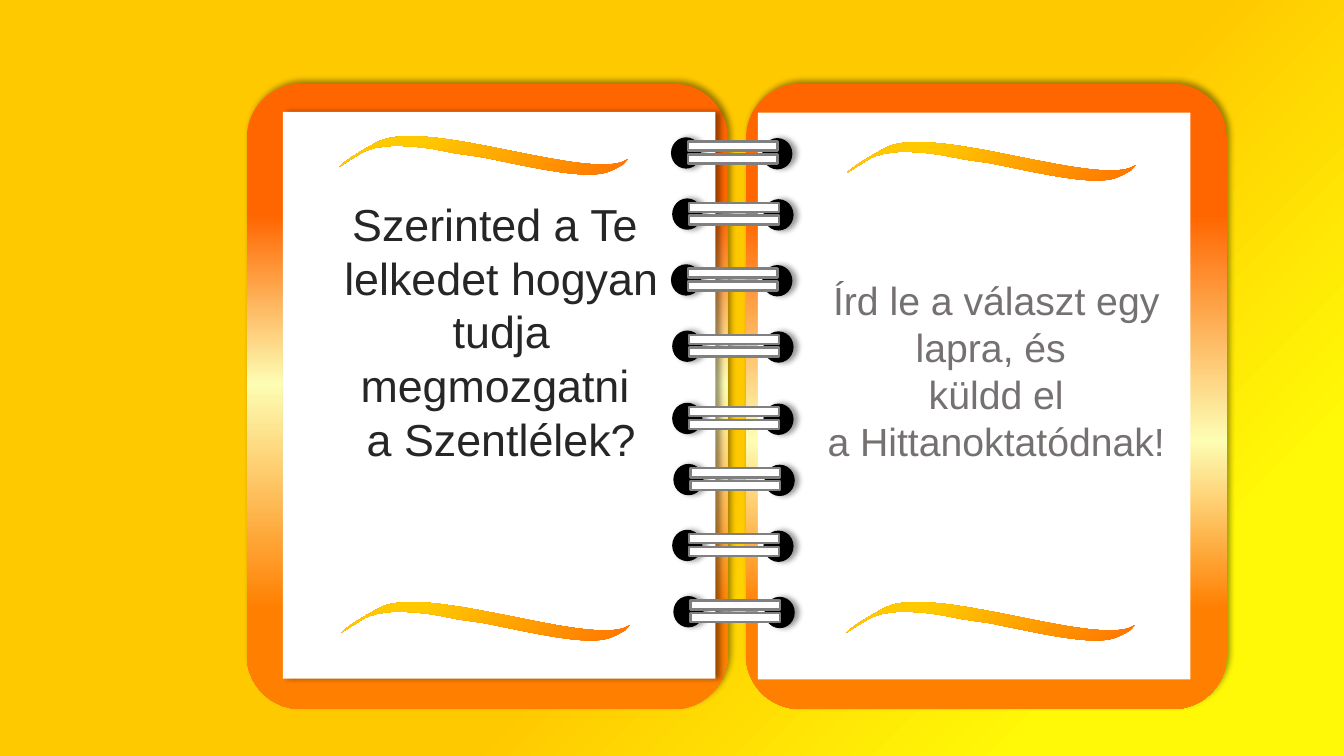
from math import cos, radians, sin

from lxml.etree import SubElement
from pptx import Presentation
from pptx.dml.color import RGBColor
from pptx.enum.shapes import MSO_SHAPE
from pptx.enum.text import MSO_ANCHOR, MSO_AUTO_SIZE, PP_ALIGN
from pptx.oxml.ns import qn
from pptx.util import Cm, Pt

COLORS = {
    "amber": "FFC900", "yellow": "FFF807", "cream": "FDFDB3",
    "orange": "FF6600", "tangerine": "FF7F00", "white": "FFFFFF",
    "black": "000000", "wire": "808080", "question": "262626", "task": "767171",
}
FONT = "Arial"
TILT = 322.9
PIVOT = (3.58, -0.03)
FLOURISH = [
    [(0.25, -0.2), (0.56, -0.38), (0.84, -0.53)],
    [(1.9, -1.22), (5.84, 0.3), (7.04, -0.05)],
    [(7.21, -0.13)],
    [(7.09, 0)],
    [(6.96, 0.08), (6.83, 0.15), (6.68, 0.2)],
    [(6.1, 0.38), (4.83, 0.08), (3.56, -0.18)],
    [(2.87, -0.28)],
    [(2.36, -0.38)],
    [(1.88, -0.46), (1.47, -0.48), (1.14, -0.46)],
    [(0.81, -0.41)],
    [(0.74, -0.38)],
    [(0.64, -0.36), (0.56, -0.33), (0.51, -0.3)],
    [(0.36, -0.2), (0.23, -0.13), (0.08, -0.03)],
    [(-0.05, 0.05)],
]


def rgb(name):
    """Return the named colour."""
    return RGBColor.from_string(COLORS[name])


class Notebook:
    """Draws the parts of the notebook on the current slide."""

    def __init__(self, prs):
        """Add a slide with a title and a body."""
        self.s = prs.slides.add_slide(prs.slide_layouts[1])

    def gradient(self, fill, element, stops, angle=None):
        """Fill with a linear gradient, or a round one from the top left."""
        fill.gradient()
        grad = next(element.iter(qn("a:gradFill")))
        for child in list(grad):
            grad.remove(child)
        gs_list = SubElement(grad, qn("a:gsLst"))
        for pos, name in stops:
            gs = SubElement(gs_list, qn("a:gs"), pos=str(pos * 1000))
            SubElement(gs, qn("a:srgbClr"), val=COLORS[name])
        if angle is None:
            way = SubElement(grad, qn("a:path"))
            way.set("path", "circle")
            SubElement(way, qn("a:fillToRect"), r="100000", b="100000")
        else:
            SubElement(grad, qn("a:lin"), ang=str(angle * 60000), scaled="0")

    def background(self, stops):
        """Fill the slide background."""
        self.gradient(self.s.background.fill, self.s.element, stops)

    def shape(self, kind, x, y, w, h, color="white", shadow=None, shapes=None):
        """Add a preset shape without outline."""
        sp = (shapes or self.s.shapes).add_shape(kind, Cm(x), Cm(y), Cm(w), Cm(h))
        sp.fill.solid()
        sp.fill.fore_color.rgb = rgb(color)
        sp.line.fill.background()
        sp.shadow.inherit = False
        if shadow is not None:
            effects = sp.element.spPr.find(qn("a:effectLst"))
            outer = SubElement(effects, qn("a:outerShdw"), blurRad=str(Pt(4)),
                               dist=str(Pt(3)), dir=str(shadow * 60000),
                               algn="l", rotWithShape="0")
            clr = SubElement(outer, qn("a:srgbClr"), val=COLORS["black"])
            SubElement(clr, qn("a:alpha"), val="40000")
        return sp

    def cover(self, x, middle):
        """Add one half of the cover."""
        sp = self.shape(MSO_SHAPE.ROUNDED_RECTANGLE, x, 2.11, 12.12, 15.76, shadow=315)
        sp.adjustments[0] = 0.113
        self.gradient(sp.fill, sp.element,
                      [(21, "orange"), (middle, "cream"), (84, "tangerine")], 90)

    def page(self, x, y, shadow=None):
        """Add a white page."""
        self.shape(MSO_SHAPE.RECTANGLE, x, y, 10.9, 14.28, shadow=shadow)

    def ring(self, x, y):
        """Add a binding ring: two holes and two wires."""
        shapes = self.s.shapes.add_group_shape().shapes
        for dx, dy in ((0, 0), (2.3, 0.02)):
            self.shape(MSO_SHAPE.FLOWCHART_CONNECTOR, x + dx, y + dy, 0.76, 0.79,
                       "black", 0, shapes)
        for dy in (0.11, 0.43):
            wire = self.shape(MSO_SHAPE.RECTANGLE, x + 0.43, y + dy, 2.26, 0.23,
                              shapes=shapes)
            wire.line.color.rgb = rgb("wire")
            wire.line.width = Pt(1.75)

    def text(self, sp, box, lines, size, color, anchor, inset):
        """Move a placeholder to the front and write centred lines in it."""
        sp.element.getparent().append(sp.element)
        sp.left, sp.top, sp.width, sp.height = (Cm(v) for v in box)
        tf = sp.text_frame
        tf.word_wrap = True
        tf.auto_size = MSO_AUTO_SIZE.NONE
        tf.vertical_anchor = anchor
        tf.margin_left = tf.margin_right = Cm(inset)
        tf.margin_top = tf.margin_bottom = Cm(inset / 2)
        for n, line in enumerate(lines):
            p = tf.add_paragraph() if n else tf.paragraphs[0]
            p.alignment = PP_ALIGN.CENTER
            p.line_spacing = 1.0
            p.space_before = p.space_after = Pt(0)
            pPr = p._p.get_or_add_pPr()
            pPr.set("marL", "0")
            pPr.set("indent", "0")
            SubElement(pPr, qn("a:buNone"))
            r = p.add_run()
            r.text = line
            r.font.name = FONT
            r.font.size = Pt(size)
            r.font.color.rgb = rgb(color)

    def flourish(self, x, y):
        """Add a tilted flourish with its tip at x, y."""
        turn = radians(360 - TILT)
        px, py = PIVOT
        pts = []
        for a, b in [(0, 0)] + [pt for seg in FLOURISH for pt in seg]:
            a, b = a - px, b - py
            pts.append((Cm(x + px + a * cos(turn) - b * sin(turn)),
                        Cm(y + py + a * sin(turn) + b * cos(turn))))
        builder = self.s.shapes.build_freeform(*pts[0])
        builder.add_line_segments(pts[1:], close=True)
        sp = builder.convert_to_shape()
        self.curve(sp)
        sp.rotation = TILT
        sp.line.fill.background()
        sp.shadow.inherit = False
        self.gradient(sp.fill, sp.element, [(35, "amber"), (84, "orange")])

    def curve(self, sp):
        """Turn each run of three line segments into one cubic curve."""
        lines = iter(list(sp.element.iter(qn("a:lnTo"))))
        for seg in FLOURISH:
            parts = [next(lines) for _ in seg]
            if len(seg) == 3:
                outline = parts[0].getparent()
                cubic = SubElement(outline, qn("a:cubicBezTo"))
                parts[0].addprevious(cubic)
                for part in parts:
                    cubic.append(part[0])
                    outline.remove(part)


def main():
    """Build the slide and save it."""
    prs = Presentation()
    prs.slide_width, prs.slide_height = Cm(33.87), Cm(19.05)
    book = Notebook(prs)
    title, body = book.s.placeholders
    book.background([(58, "amber"), (84, "yellow")])
    book.cover(6.22, 48)
    book.page(7.13, 2.82, 0)
    book.cover(18.8, 57)
    book.page(19.1, 2.84)
    book.text(title, (8.33, 4.95, 8.61, 9),
              ["Szerinted a Te ", "lelkedet hogyan tudja megmozgatni ", "a Szentlélek?"],
              32, "question", MSO_ANCHOR.TOP, 0)
    book.text(body, (20.29, 5.13, 9.63, 8.41),
              ["Írd le a választ egy lapra, és ", "küldd el", "a Hittanoktatódnak!"],
              28, "task", MSO_ANCHOR.MIDDLE, 0.25)
    for half in range(2):
        for n, y in enumerate((3.46, 5, 6.66, 8.33)):
            book.ring(16.91 + 0.03 * (half + n % 2), y + 6.69 * half)
    for x, y in ((21.39, 15.88), (8.66, 15.88), (21.41, 4.29), (8.61, 4.14)):
        book.flourish(x, y)
    prs.save("out.pptx")


if __name__ == "__main__":
    main()
